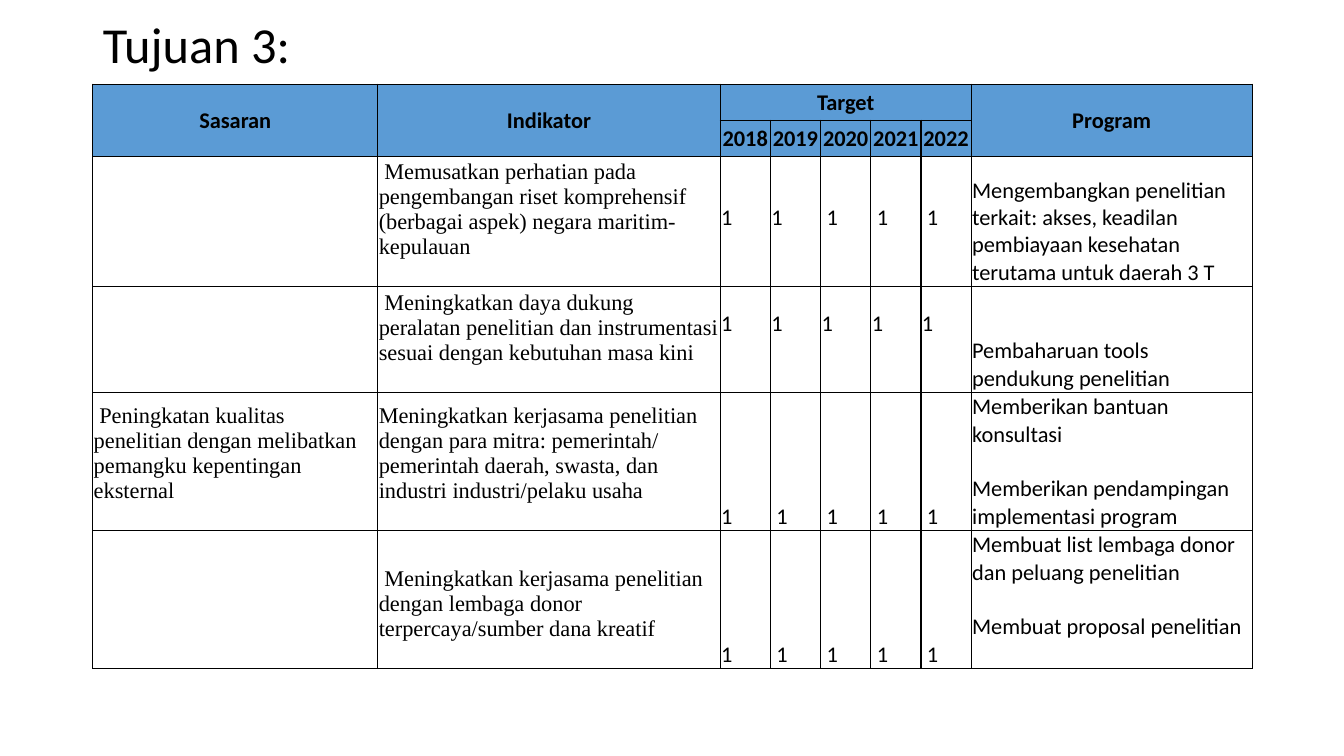
"""Build the Tujuan 3 slide with its table of targets and programs."""
from dataclasses import dataclass

from lxml import etree
from pptx import Presentation
from pptx import util as u
from pptx.dml import color
from pptx.enum import text
from pptx.oxml import ns

HUES = {"ink": "000000", "head": "5B9BD5", "page": "FFFFFF"}
SANS, SERIF = "Calibri", "Times New Roman"
LINE = 19.5
YEARS = range(2018, 2023)
WIDTHS = [203.6, 244.6] + [35.86] * len(YEARS) + [200.7]
HEIGHTS = [25.7, 25.7, 92.9, 75.7, 98.6, 98.6]
PADS = {"margin_left": 0.72, "margin_right": 0.72, "margin_top": 0.72}


@dataclass(frozen=True)
class Head:
    """A header cell with its place and span."""
    label: str
    row: int
    col: int
    rows: int = 1
    cols: int = 1


@dataclass(frozen=True)
class Goal:
    """A body row; each lift counts free lines under the text."""
    aim: str
    sign: str
    marks: tuple[str, ...]
    plan: tuple[str, ...]
    lift: int = 0
    rise: int = 0


HEADS = [
    Head("Sasaran", 0, 0, rows=2),
    Head("Indikator", 0, 1, rows=2),
    Head("Target", 0, 2, cols=len(YEARS)),
    Head("Program", 0, 7, rows=2),
] + [Head(str(year), 1, col) for col, year in enumerate(YEARS, 2)]

GOALS = [
    Goal("", " Memusatkan perhatian pada pengembangan riset komprehensif "
         "(berbagai aspek) negara maritim- kepulauan",
         ("1", "1", " 1", " 1", " 1"),
         ("Mengembangkan penelitian terkait: akses, keadilan pembiayaan "
          "kesehatan terutama untuk daerah 3 T",), lift=2),
    Goal("", " Meningkatkan daya dukung peralatan penelitian dan instrumentasi "
         "sesuai dengan kebutuhan masa kini",
         ("1",) * 5, ("Pembaharuan tools pendukung penelitian",), lift=2),
    Goal(" Peningkatan kualitas penelitian dengan melibatkan pemangku "
         "kepentingan eksternal",
         "Meningkatkan kerjasama penelitian dengan para mitra: pemerintah/ "
         "pemerintah daerah, swasta, dan industri industri/pelaku usaha",
         ("1",) + (" 1",) * 4,
         ("Memberikan bantuan konsultasi",
          "Memberikan pendampingan implementasi program")),
    Goal("", " Meningkatkan kerjasama penelitian dengan lembaga donor "
         "terpercaya/sumber dana kreatif",
         ("1",) + (" 1",) * 4,
         ("Membuat list lembaga donor dan peluang penelitian",
          "Membuat proposal penelitian"), rise=1),
]


def tint(name: str) -> color.RGBColor:
    """Return a named colour."""
    return color.RGBColor.from_string(HUES[name])


def style(font, **form) -> None:
    """Set font values and black ink."""
    for key, value in form.items():
        setattr(font, key, value)
    font.color.rgb = tint("ink")


def frame(cell) -> None:
    """Draw a thin line on every side of a cell."""
    props = cell._tc.get_or_add_tcPr()
    for spot, side in enumerate(("lnL", "lnR", "lnT", "lnB")):
        line = etree.Element(ns.qn(f"a:{side}"), w=str(u.Pt(1)))
        fill = etree.SubElement(line, ns.qn("a:solidFill"))
        etree.SubElement(fill, ns.qn("a:srgbClr"), val=HUES["ink"])
        props.insert(spot, line)


def write(cell, lines: tuple[str, ...], face: str = SANS, lift: int = 0,
          head: bool = False) -> None:
    """Fill a cell with formatted paragraphs."""
    for key, value in PADS.items():
        setattr(cell, key, u.Pt(value))
    cell.margin_bottom = u.Pt(lift * LINE)
    anchor = text.MSO_ANCHOR
    cell.vertical_anchor = anchor.MIDDLE if head else anchor.BOTTOM
    for spot, words in enumerate(lines):
        para = (cell.text_frame.add_paragraph() if spot
                else cell.text_frame.paragraphs[0])
        para.alignment = text.PP_ALIGN.CENTER if head else text.PP_ALIGN.LEFT
        if spot:
            para.space_before = u.Pt(LINE)
        run = para.add_run()
        run.text = words
        style(run.font, name=face, size=u.Pt(16), bold=head)


def grid(slide) -> None:
    """Add the table with its header and goals."""
    table = slide.shapes.add_table(
        len(HEIGHTS), len(WIDTHS), u.Pt(66.24), u.Pt(60.2),
        u.Pt(sum(WIDTHS)), u.Pt(sum(HEIGHTS))).table
    table.first_row = table.horz_banding = False
    for col, width in zip(table.columns, WIDTHS):
        col.width = u.Pt(width)
    for spot, (row, height) in enumerate(zip(table.rows, HEIGHTS)):
        row.height = u.Pt(height)
        for cell in row.cells:
            cell.fill.solid()
            cell.fill.fore_color.rgb = tint("head" if spot < 2 else "page")
            frame(cell)
    for head in HEADS:
        cell = table.cell(head.row, head.col)
        if head.rows * head.cols > 1:
            cell.merge(table.cell(head.row + head.rows - 1,
                                  head.col + head.cols - 1))
        write(cell, (head.label,), head=True)
    for row, goal in enumerate(GOALS, 2):
        if goal.aim:
            write(table.cell(row, 0), (goal.aim,), SERIF, 1)
        write(table.cell(row, 1), (goal.sign,), SERIF, 1)
        for col, mark in enumerate(goal.marks, 2):
            write(table.cell(row, col), (mark,), lift=goal.lift)
        write(table.cell(row, 7), goal.plan, lift=goal.rise)


def main() -> None:
    """Build and save the slide."""
    deck = Presentation()
    deck.slide_width, deck.slide_height = u.Pt(960), u.Pt(540)
    slide = deck.slides.add_slide(deck.slide_layouts[5])
    title = slide.shapes.title
    place = {"left": 66.24, "top": 7.92, "width": 828, "height": 51.12}
    for key, value in place.items():
        setattr(title, key, u.Pt(value))
    title.text_frame.text = "Tujuan 3:"
    title.text_frame.vertical_anchor = text.MSO_ANCHOR.MIDDLE
    para = title.text_frame.paragraphs[0]
    para.alignment, para.line_spacing = text.PP_ALIGN.LEFT, 0.9
    style(para.runs[0].font, name=SANS, size=u.Pt(36))
    grid(slide)
    deck.save("out.pptx")


if __name__ == "__main__":
    main()
